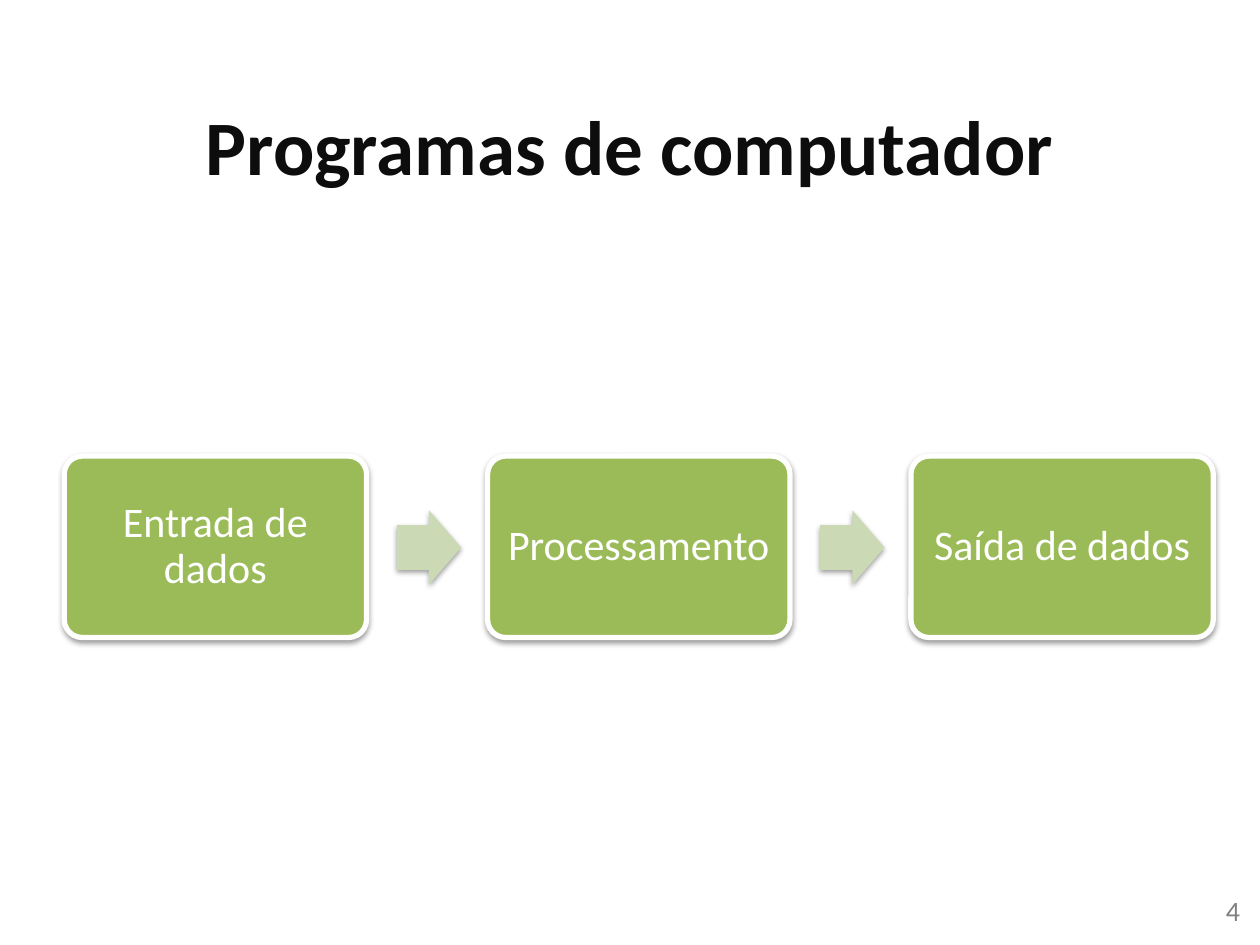
"""Build a slide showing the input, processing and output steps of a program."""
import pptx
import pptx.util
import pptx.dml.color
import pptx.enum.shapes
import pptx.enum.text
import pptx.oxml
import pptx.oxml.ns

Inches = pptx.util.Inches
Pt = pptx.util.Pt
RGBColor = pptx.dml.color.RGBColor
ALIGN = pptx.enum.text.PP_ALIGN
ANCHOR = pptx.enum.text.MSO_ANCHOR
SHAPE = pptx.enum.shapes.MSO_SHAPE

WHITE = RGBColor(0xFF, 0xFF, 0xFF)
NEAR_BLACK = RGBColor(0x0D, 0x0D, 0x0D)
GRAY = RGBColor(0x80, 0x80, 0x80)
GREEN = RGBColor(0x9B, 0xBB, 0x59)
PALE_GREEN = RGBColor(0xCB, 0xDA, 0xB5)

SHADOW = (
    f'<a:effectLst {pptx.oxml.ns.nsdecls("a")}>'
    '<a:outerShdw blurRad="40000" dist="20000" dir="5400000" rotWithShape="0">'
    '<a:srgbClr val="000000"><a:alpha val="38000"/></a:srgbClr>'
    '</a:outerShdw></a:effectLst>'
)


def write_text(shape, text, size, color, alignment, anchor, bold=False):
    frame = shape.text_frame
    frame.word_wrap = True
    frame.vertical_anchor = anchor
    paragraph = frame.paragraphs[0]
    paragraph.text = text
    paragraph.alignment = alignment
    font_format = {"name": "Calibri", "size": Pt(size), "bold": bold}
    font = paragraph.runs[0].font
    for name, value in font_format.items():
        setattr(font, name, value)
    font.color.rgb = color
    return paragraph


def add_shadowed_shape(kind, left, top, width, height, fill, adjustments):
    shape = slide.shapes.add_shape(
        kind, Inches(left), Inches(top), Inches(width), Inches(height))
    for index, value in enumerate(adjustments):
        shape.adjustments[index] = value
    shape.fill.solid()
    shape.fill.fore_color.rgb = fill
    shape.line.fill.background()
    shape._element.spPr.append(pptx.oxml.parse_xml(SHADOW))
    return shape


presentation = pptx.Presentation()
presentation.slide_width = Inches(10)
presentation.slide_height = Inches(7.5)
slide = presentation.slides.add_slide(presentation.slide_layouts[6])

title = slide.shapes.add_textbox(Inches(0.5), Inches(0.52), Inches(9), Inches(1.25))
write_text(title, "Programas de computador", 44, NEAR_BLACK,
           ALIGN.CENTER, ANCHOR.MIDDLE, bold=True)

page_number = slide.shapes.add_textbox(
    Inches(7.61), Inches(7.04), Inches(2.33), Inches(0.4))
write_text(page_number, "4", 16, GRAY, ALIGN.RIGHT, ANCHOR.TOP)

steps = ["Entrada de dados", "Processamento", "Saída de dados"]
first_left, step_pitch = 0.51, 3.36
margins = {f"margin_{side}": Inches(0.1) for side in ("left", "top", "right", "bottom")}

for index, step in enumerate(steps):
    left = first_left + index * step_pitch
    if index > 0:
        add_shadowed_shape(SHAPE.RIGHT_ARROW, left - 0.72, 4.05, 0.51, 0.59,
                           PALE_GREEN, [0.6, 0.5])
    box = add_shadowed_shape(SHAPE.ROUNDED_RECTANGLE, left, 3.62, 2.4, 1.44,
                             GREEN, [0.1])
    box.line.color.rgb = WHITE
    box.line.width = Pt(3)
    for name, value in margins.items():
        setattr(box.text_frame, name, value)
    paragraph = write_text(box, step, 24, WHITE, ALIGN.CENTER, ANCHOR.MIDDLE)
    paragraph.line_spacing = 0.9

presentation.save("out.pptx")
